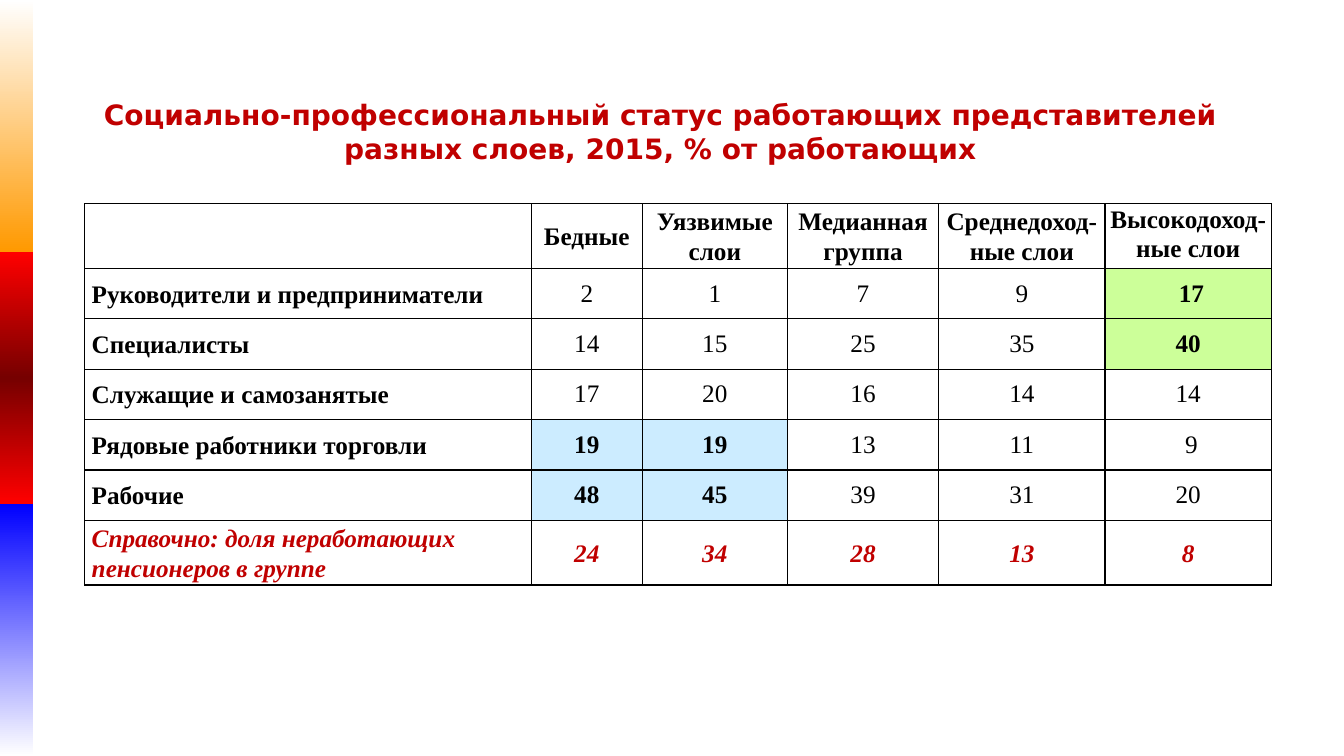
from dataclasses import dataclass

from lxml.etree import SubElement
from pptx import Presentation
from pptx.dml.color import RGBColor
from pptx.enum.shapes import MSO_SHAPE
from pptx.enum.text import MSO_ANCHOR, MSO_AUTO_SIZE, PP_ALIGN
from pptx.oxml import parse_xml
from pptx.oxml.ns import nsdecls, qn
from pptx.util import Inches, Pt

TITLE = ("Социально-профессиональный статус работающих представителей "
         "разных слоев, 2015, % от работающих")
ROWS = [
    ("", "Бедные", "Уязвимые слои", "Медианная группа",
     "Среднедоход-ные слои", "Высокодоход-ные слои"),
    ("Руководители и предприниматели", "2", "1", "7", "9", " 17"),
    ("Специалисты", "14", "15", "25", "35", "40"),
    ("Служащие и самозанятые", "17", "20", "16", "14", "14"),
    ("Рядовые работники торговли", "19", "19", "13", "11", " 9"),
    ("Рабочие", "48", "45", "39", "31", "20"),
    ("Справочно: доля неработающих пенсионеров в группе",
     "24", "34", "28", "13", "8"),
]
COL_WIDTHS = [4.43, 1.1, 1.44, 1.5, 1.65, 1.65]
ROW_HEIGHTS = [0.64] + [0.5] * 5 + [0.64]
HIGH_CELLS = {(1, 5), (2, 5)}
LOW_CELLS = {(4, 1), (4, 2), (5, 1), (5, 2)}
LAST_ROW, LAST_COL = len(ROWS) - 1, len(COL_WIDTHS) - 1
BARS = [
    [(0, "FFFFFF"), (100, "FF9900")],
    [(0, "FF0000"), (50, "760000"), (100, "FF0000")],
    [(0, "0000FF"), (100, "FFFFFF")],
]
BAR_WIDTH, BAR_HEIGHT = 0.33, 2.5


@dataclass(frozen=True)
class Theme:
    title_font: str = "DejaVu Sans"
    table_font: str = "Times New Roman"
    title_size: int = 20
    table_size: int = 18
    text: str = "000000"
    accent: str = "C00000"
    paper: str = "FFFFFF"
    high: str = "CCFF99"
    low: str = "CCECFF"
    border: str = "000000"


THEME = Theme()


def set_font(p, name, size, color, bold=False, italic=False):
    f = p.font
    f.name, f.size, f.bold, f.italic = name, Pt(size), bold, italic
    f.color.rgb = RGBColor.from_string(color)


def add_bar(slide, index, stops):
    """Stack a bar on the left edge, shaded from top to bottom."""
    sp = slide.shapes.add_shape(
        MSO_SHAPE.RECTANGLE, 0, Inches(index * BAR_HEIGHT),
        Inches(BAR_WIDTH), Inches(BAR_HEIGHT))
    sp.shadow.inherit = False
    sp.line.fill.background()
    gs = "".join(f'<a:gs pos="{pos * 1000}"><a:srgbClr val="{color}"/></a:gs>'
                 for pos, color in stops)
    grad = parse_xml(f'<a:gradFill {nsdecls("a")} rotWithShape="1">'
                     f'<a:gsLst>{gs}</a:gsLst>'
                     '<a:lin ang="5400000" scaled="0"/></a:gradFill>')
    sp.element.spPr.find(qn("a:prstGeom")).addnext(grad)


def add_borders(cell):
    tc_pr = cell._tc.get_or_add_tcPr()
    for i, side in enumerate(("lnL", "lnR", "lnT", "lnB")):
        ln = parse_xml(f'<a:{side} {nsdecls("a")} w="{Pt(1)}"/>')
        fill = SubElement(ln, qn("a:solidFill"))
        SubElement(fill, qn("a:srgbClr"), val=THEME.border)
        tc_pr.insert(i, ln)


def cell_fill(row, col):
    if (row, col) in HIGH_CELLS:
        return THEME.high
    return THEME.low if (row, col) in LOW_CELLS else THEME.paper


def format_cell(cell, row, col, text):
    cell.fill.solid()
    cell.fill.fore_color.rgb = RGBColor.from_string(cell_fill(row, col))
    add_borders(cell)
    header, reference = row == 0, row == LAST_ROW
    corner = header and col == LAST_COL
    cell.vertical_anchor = MSO_ANCHOR.TOP if corner else MSO_ANCHOR.MIDDLE
    cell.margin_left = cell.margin_right = Inches(0 if col == LAST_COL else 0.07)
    cell.margin_top = cell.margin_bottom = 0
    cell.text = text
    p = cell.text_frame.paragraphs[0]
    p.alignment = PP_ALIGN.LEFT if col == 0 else PP_ALIGN.CENTER
    if header or reference or col == 0:
        p.line_spacing = 1.07
    if header:
        p.space_after = Pt(8)
    bold = (header or reference or col == 0
            or (row, col) in HIGH_CELLS | LOW_CELLS)
    set_font(p, THEME.table_font, THEME.table_size,
             THEME.accent if reference else THEME.text, bold, reference)


def add_status_table(slide):
    frame = slide.shapes.add_table(
        len(ROWS), len(COL_WIDTHS), Inches(0.84), Inches(2.02),
        Inches(sum(COL_WIDTHS)), Inches(sum(ROW_HEIGHTS)))
    table = frame.table
    table.first_row = table.horz_banding = False
    for column, width in zip(table.columns, COL_WIDTHS):
        column.width = Inches(width)
    for r, (values, height) in enumerate(zip(ROWS, ROW_HEIGHTS)):
        table.rows[r].height = Inches(height)
        for c, text in enumerate(values):
            format_cell(table.cell(r, c), r, c, text)


def format_title(title):
    title.left, title.top = Inches(0.84), Inches(0.92)
    title.width, title.height = Inches(11.42), Inches(0.77)
    tf = title.text_frame
    tf.text = TITLE
    tf.word_wrap = True
    tf.auto_size = MSO_AUTO_SIZE.SHAPE_TO_FIT_TEXT
    tf.vertical_anchor = MSO_ANCHOR.TOP
    p = tf.paragraphs[0]
    p.alignment = PP_ALIGN.CENTER
    set_font(p, THEME.title_font, THEME.title_size, THEME.accent, bold=True)


def main():
    prs = Presentation()
    prs.slide_width, prs.slide_height = Inches(13.33), Inches(7.5)
    slide = prs.slides.add_slide(prs.slide_layouts[5])
    for i, stops in enumerate(BARS):
        add_bar(slide, i, stops)
    add_status_table(slide)
    format_title(slide.shapes.title)
    prs.save("out.pptx")


if __name__ == "__main__":
    main()
